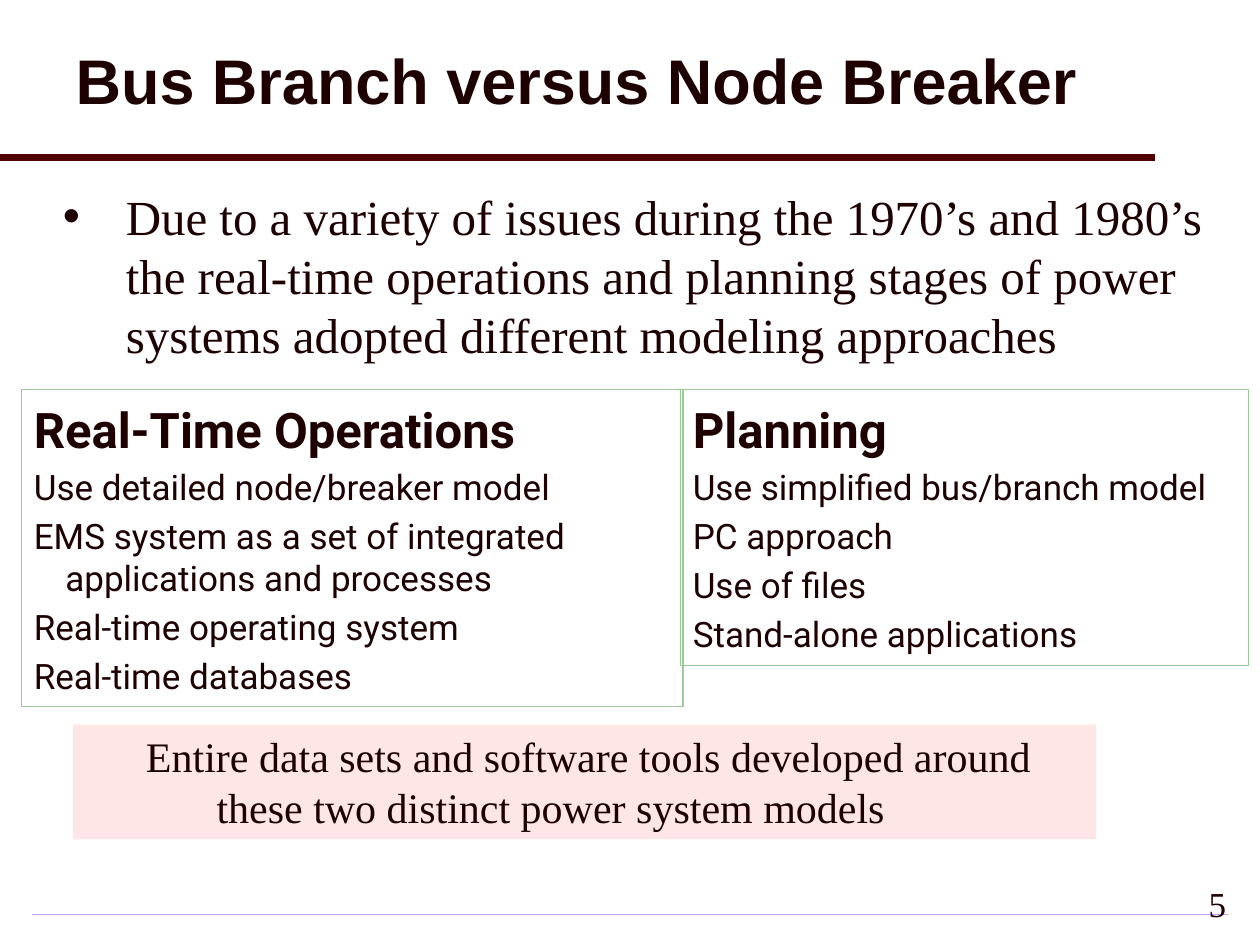
from lxml.etree import SubElement
from pptx import Presentation
from pptx.dml.color import RGBColor
from pptx.enum.shapes import MSO_CONNECTOR as CONN, MSO_SHAPE as SHAPE
from pptx.enum.text import MSO_ANCHOR as ANCHOR, PP_ALIGN as ALIGN
from pptx.oxml import parse_xml
from pptx.oxml.ns import nsdecls, qn
from pptx.util import Inches, Pt

COLORS = {"text": "1E0000", "rule": "500000", "border": "99CC99",
          "note": "FFE6E6", "footer": "CC99FF", "footer_edge": "F3EBFF"}
SERIF, SANS, HEAD = "Times New Roman", "Roboto", "Arial"

PANEL_TOP = 3.09
PANELS = [
    (0.17, 5.25, 2.52, "Real-Time Operations",
     ["Use detailed node/breaker model",
      "EMS system as a set of integrated applications and processes",
      "Real-time operating system", "Real-time databases"]),
    (5.4, 4.51, 2.19, "Planning",
     ["Use simplified bus/branch model", "PC approach", "Use of files",
      "Stand-alone applications"]),
]


def rgb(name):
    return RGBColor.from_string(COLORS[name])


def place(s, box):
    s.left, s.top, s.width, s.height = (Inches(v) for v in box)


def write(tf, text, size, font, bold=False, align=ALIGN.LEFT, margin=0,
          indent=0, before=0, spacing=None, bullet=None):
    """Fill the empty first paragraph, or append a new one."""
    p = tf.paragraphs[0]
    if p.runs:
        p = tf.add_paragraph()
    pPr = p._p.get_or_add_pPr()
    pPr.set("marL", str(Inches(margin)))
    pPr.set("indent", str(Inches(indent)))
    p.alignment, p.space_before = align, Pt(before)
    if spacing:
        p.line_spacing = spacing
    if bullet:
        SubElement(pPr, qn("a:buFont")).set("typeface", HEAD)
        SubElement(pPr, qn("a:buChar")).set("char", bullet)
    r = p.add_run()
    r.text = text
    f = r.font
    f.size, f.name, f.bold, f.color.rgb = Pt(size), font, bold, rgb("text")


def add_box(slide, box, fill=None, line=None, inset=0.08):
    s = slide.shapes.add_shape(SHAPE.RECTANGLE, *(Inches(v) for v in box))
    s.shadow.inherit = False
    if fill:
        s.fill.solid()
        s.fill.fore_color.rgb = rgb(fill)
    else:
        s.fill.background()
    if line:
        s.line.color.rgb, s.line.width = rgb(line), Pt(0.75)
    else:
        s.line.fill.background()
    tf = s.text_frame
    tf.word_wrap, tf.vertical_anchor = True, ANCHOR.TOP
    tf.margin_top = Inches(inset)
    return s


def add_text(slide, box, inset=0.05):
    tf = slide.shapes.add_textbox(*(Inches(v) for v in box)).text_frame
    tf.word_wrap, tf.margin_top = True, Inches(inset)
    return tf


def add_title(slide, text):
    s = slide.shapes.title
    place(s, (0.5, 0.08, 9.17, 1.17))
    s.text_frame.vertical_anchor = ANCHOR.MIDDLE
    write(s.text_frame, text, 36, HEAD, bold=True, spacing=0.9)


def add_title_rule(slide):
    c = slide.shapes.add_connector(CONN.STRAIGHT, 0, Inches(1.25),
                                   Inches(9.17), Inches(1.25))
    c.line.color.rgb, c.line.width = rgb("rule"), Pt(4)
    SubElement(c._element.spPr, qn("a:effectLst"))


def add_footer_rule(slide):
    """Thin bar shaded from its centre outwards."""
    s = add_box(slide, (0.25, 7.25, 9.5, 0.01))
    spPr = s._element.spPr
    stops = "".join(
        f'<a:gs pos="{pos}"><a:srgbClr val="{COLORS[name]}"/></a:gs>'
        for pos, name in ((0, "footer"), (100000, "footer_edge")))
    spPr.replace(spPr.find(qn("a:noFill")), parse_xml(
        f'<a:gradFill {nsdecls("a")}><a:gsLst>{stops}</a:gsLst>'
        '<a:path path="shape"><a:fillToRect l="50000" t="50000" r="50000" '
        'b="50000"/></a:path></a:gradFill>'))


def add_panel(slide, left, width, height, heading, items):
    tf = add_box(slide, (left, PANEL_TOP, width, height),
                 line="border").text_frame
    write(tf, heading, 28, SANS, bold=True)
    for item in items:
        write(tf, item, 20, SANS, margin=0.25, indent=-0.25, before=4)


def main():
    prs = Presentation()
    prs.slide_width, prs.slide_height = Inches(10), Inches(7.5)
    slide = prs.slides.add_slide(prs.slide_layouts[5])

    add_footer_rule(slide)
    add_title_rule(slide)
    add_title(slide, "Bus Branch versus Node Breaker")
    write(add_text(slide, (0.4, 1.4, 9.43, 1.77), inset=0.08),
          "Due to a variety of issues during the 1970’s and 1980’s the "
          "real-time operations and planning stages of power systems adopted "
          "different modeling approaches",
          28, SERIF, margin=0.5, indent=-0.5, bullet="•")
    for panel in reversed(PANELS):
        add_panel(slide, *panel)
    note = add_box(slide, (0.58, 5.75, 8.12, 0.91), fill="note", inset=0.05)
    write(note.text_frame, "Entire data sets and software tools developed "
          "around these two distinct power system models",
          24, SERIF, margin=1.04, indent=-0.56)
    number = add_text(slide, (7.75, 6.92, 2.08, 0.5))
    number.vertical_anchor = ANCHOR.MIDDLE
    write(number, "5", 20, SERIF, align=ALIGN.RIGHT)

    prs.save("out.pptx")


if __name__ == "__main__":
    main()
